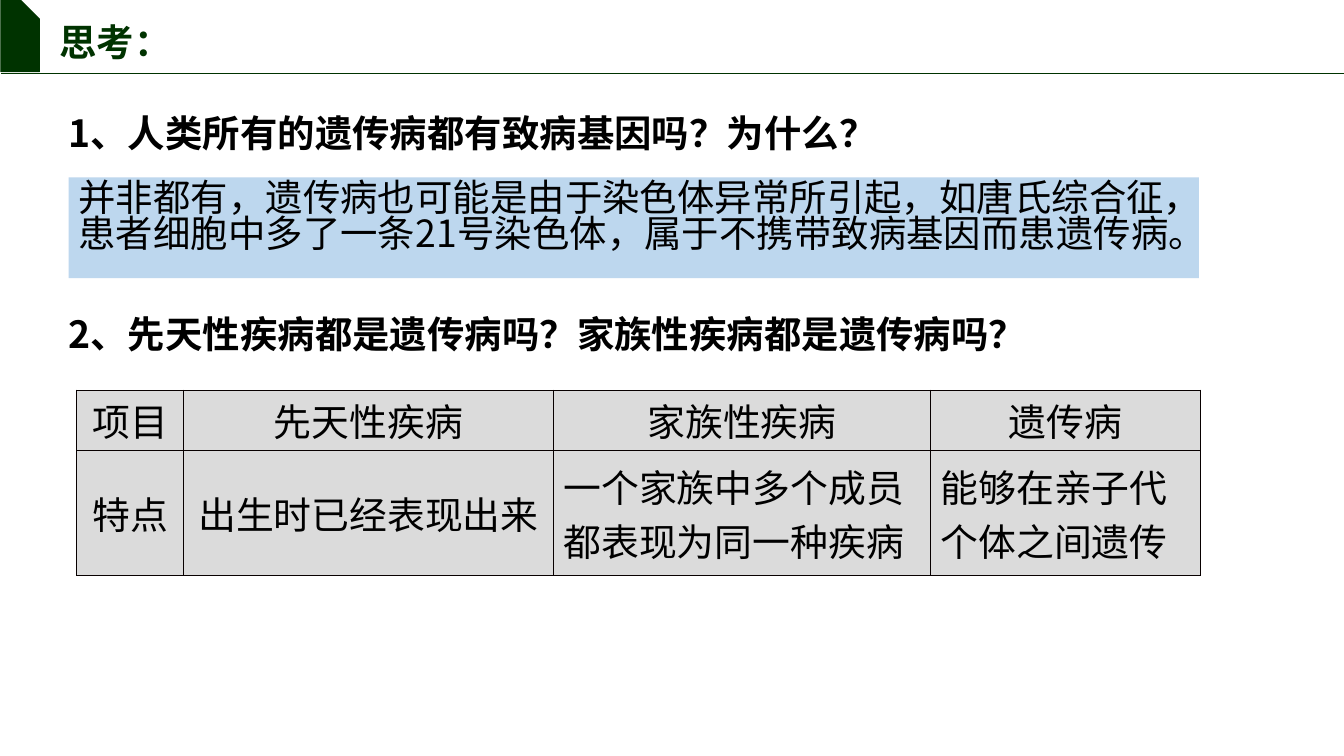
from lxml.etree import SubElement
from pptx import Presentation
from pptx.dml.color import RGBColor
from pptx.enum.shapes import MSO_CONNECTOR, MSO_SHAPE
from pptx.enum.text import MSO_ANCHOR, MSO_AUTO_SIZE, PP_ALIGN
from pptx.oxml.ns import qn
from pptx.util import Inches, Pt

COLORS = {"green": "003300", "text": "000000", "answer": "BDD7EE",
          "cell": "DBDBDB", "border": "080000"}
FONT = "Noto Sans CJK SC"


class SlideBuilder:
    def __init__(self, slide):
        self.slide = slide

    def color(self, name):
        return RGBColor.from_string(COLORS[name])

    def xml_line(self, parent, tag, width, color):
        line = SubElement(parent, qn(tag), w=str(Pt(width)))
        fill = SubElement(line, qn("a:solidFill"))
        SubElement(fill, qn("a:srgbClr"), val=COLORS[color])
        return line

    def format_text(self, frame, size, color="text", bold=False,
                    align=PP_ALIGN.LEFT, spacing=1.0):
        for paragraph in frame.paragraphs:
            paragraph.alignment = align
            paragraph.line_spacing = spacing
            for run in paragraph.runs:
                run.font.size = Pt(size)
                run.font.bold = bold
                run.font.name = FONT
                run.font.color.rgb = self.color(color)
                SubElement(run.font._element, qn("a:ea"), typeface=FONT)

    def title(self, text, left, top, width, height):
        title = self.slide.shapes.title
        title.left, title.top = Inches(left), Inches(top)
        title.width, title.height = Inches(width), Inches(height)
        frame = title.text_frame
        frame.text = text
        frame.auto_size = MSO_AUTO_SIZE.NONE
        frame.vertical_anchor = MSO_ANCHOR.MIDDLE
        frame.margin_left = frame.margin_right = Inches(0.13)
        frame.margin_top = frame.margin_bottom = Inches(0.07)
        self.format_text(frame, 26.7, "green", bold=True)

    def rule(self, left, right, y, width):
        rule = self.slide.shapes.add_connector(
            MSO_CONNECTOR.STRAIGHT, Inches(left), Inches(y), Inches(right), Inches(y))
        rule.line.color.rgb = self.color("green")
        rule.line.width = Pt(width)
        SubElement(rule._element.spPr, qn("a:effectLst"))

    def shape(self, kind, left, top, width, height, fill, outline=None):
        shape = self.slide.shapes.add_shape(
            kind, Inches(left), Inches(top), Inches(width), Inches(height))
        shape.shadow.inherit = False
        shape.fill.solid()
        shape.fill.fore_color.rgb = self.color(fill)
        if outline:
            shape.line.color.rgb = self.color(outline)
            shape.line.width = Pt(1)
        else:
            shape.line.fill.background()
        return shape

    def paragraph_box(self, box, text, bold=False):
        frame = box.text_frame
        frame.text = text
        frame.word_wrap = True
        frame.auto_size = MSO_AUTO_SIZE.SHAPE_TO_FIT_TEXT
        frame.vertical_anchor = MSO_ANCHOR.TOP
        self.format_text(frame, 26.7, bold=bold, spacing=0.81)

    def question(self, text, left, top, width, height):
        box = self.slide.shapes.add_textbox(
            Inches(left), Inches(top), Inches(width), Inches(height))
        self.paragraph_box(box, text, bold=True)

    def answer(self, text, left, top, width, height):
        box = self.shape(MSO_SHAPE.RECTANGLE, left, top, width, height, "answer")
        self.paragraph_box(box, text)

    def cell(self, cell, text, align):
        cell.text_frame.text = text
        cell.vertical_anchor = MSO_ANCHOR.MIDDLE
        cell.margin_left = cell.margin_right = Inches(0.1)
        cell.margin_top = cell.margin_bottom = 0
        self.format_text(cell.text_frame, 27, align=align)
        properties = cell._tc.get_or_add_tcPr()
        for side in ("a:lnL", "a:lnR", "a:lnT", "a:lnB"):
            self.xml_line(properties, side, 1, "border")
        cell.fill.solid()
        cell.fill.fore_color.rgb = self.color("cell")

    def table(self, rows, left, top, widths, heights, left_aligned):
        table = self.slide.shapes.add_table(
            len(rows), len(widths), Inches(left), Inches(top),
            Inches(sum(widths)), Inches(sum(heights))).table
        for column, width in zip(table.columns, widths):
            column.width = Inches(width)
        for r, (texts, height) in enumerate(zip(rows, heights)):
            table.rows[r].height = Inches(height)
            for c, text in enumerate(texts):
                align = PP_ALIGN.LEFT if (r, c) in left_aligned else PP_ALIGN.CENTER
                self.cell(table.cell(r, c), text, align)


def main():
    deck = Presentation()
    deck.slide_width, deck.slide_height = Inches(13.33), Inches(7.5)
    builder = SlideBuilder(deck.slides.add_slide(deck.slide_layouts[5]))

    # Header
    builder.rule(0.01, 13.35, 0.73, 0.5)
    corner = builder.shape(MSO_SHAPE.SNIP_1_RECTANGLE, 0.01, 0, 0.38, 0.71,
                           "green", "green")
    corner.adjustments[0] = 0.5
    builder.title("思考：", 0.46, 0.18, 1.85, 0.47)

    # Questions and answer
    builder.question("1、人类所有的遗传病都有致病基因吗？为什么？", 0.58, 1.13, 8.04, 0.55)
    builder.answer("并非都有，遗传病也可能是由于染色体异常所引起，如唐氏综合征，"
                   "患者细胞中多了一条21号染色体，属于不携带致病基因而患遗传病。",
                   0.68, 1.76, 11.21, 1)
    builder.question("2、先天性疾病都是遗传病吗？家族性疾病都是遗传病吗？",
                     0.58, 3.12, 9.74, 0.55)

    # Comparison of disease types
    builder.table(
        [["项目", "先天性疾病", "家族性疾病", "遗传病"],
         ["特点", "出生时已经表现出来", "一个家族中多个成员都表现为同一种疾病",
          "能够在亲子代个体之间遗传"]],
        0.76, 3.87, [1.06, 3.67, 3.74, 2.68], [0.6, 1.24],
        left_aligned={(1, 2), (1, 3)})

    deck.save("out.pptx")


if __name__ == "__main__":
    main()
